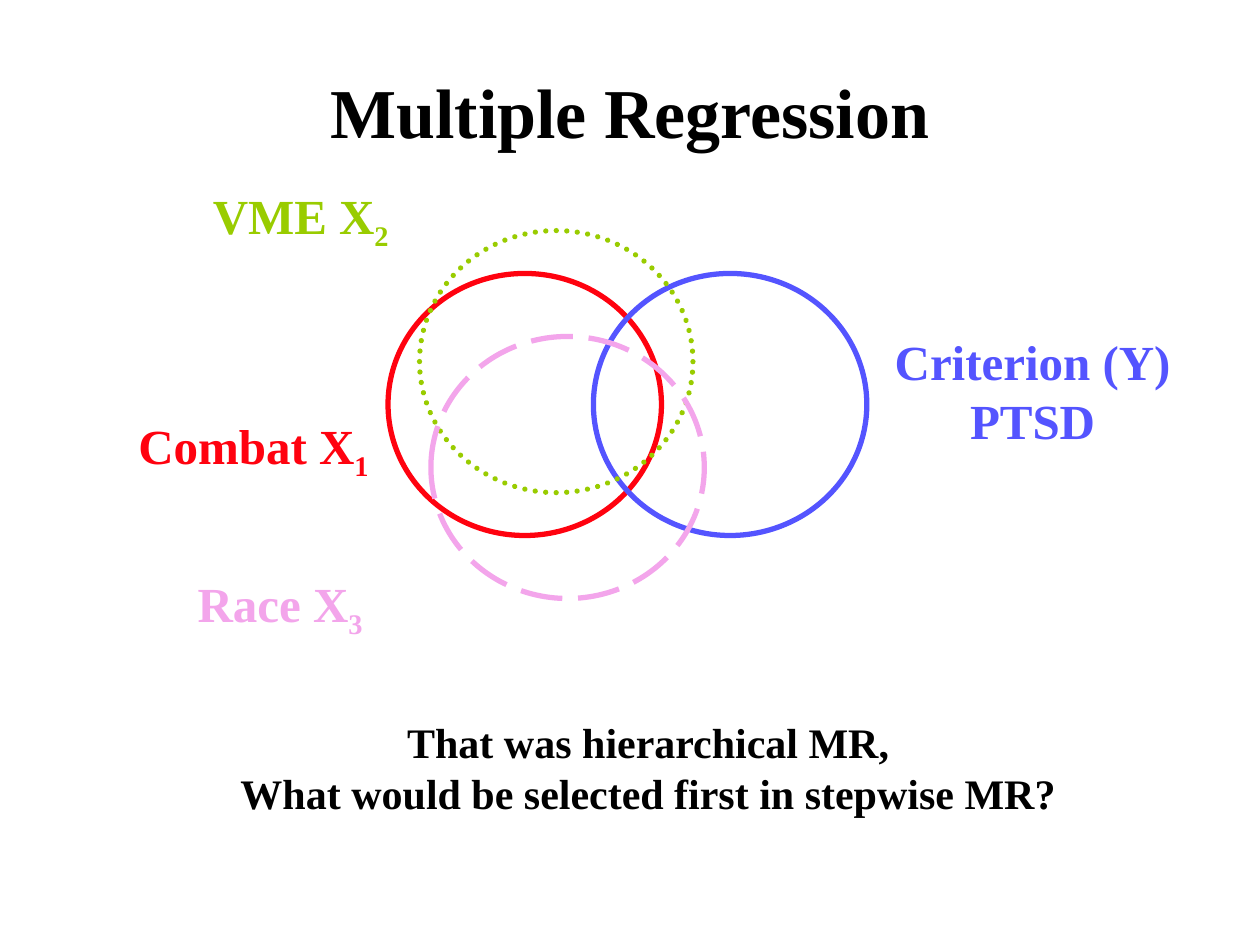
from dataclasses import dataclass

from pptx import Presentation
from pptx.dml.color import RGBColor
from pptx.enum.dml import MSO_LINE
from pptx.enum.shapes import MSO_SHAPE
from pptx.enum.text import MSO_ANCHOR, PP_ALIGN
from pptx.util import Inches, Pt

OVAL = MSO_SHAPE.OVAL
SOLID, DOTTED, DASHED = MSO_LINE.SOLID, MSO_LINE.ROUND_DOT, MSO_LINE.LONG_DASH
LEFT, CENTER = PP_ALIGN.LEFT, PP_ALIGN.CENTER
MIDDLE = MSO_ANCHOR.MIDDLE


@dataclass(frozen=True)
class Theme:
    font: str = "Times New Roman"
    black: str = "000000"
    combat: str = "FF020F"
    criterion: str = "5454FF"
    vme: str = "99CC00"
    race: str = "F3A5EB"
    title_size: int = 40
    label_size: int = 28
    question_size: int = 24
    line_width: int = 3


theme = Theme()


def style(p, size, color, align):
    p.alignment = align
    p.font.name = theme.font
    p.font.size = Pt(size)
    p.font.bold = True
    p.font.color.rgb = RGBColor.from_string(color)


def add_text(s, box, lines, size, color, align, subscript=""):
    tf = s.shapes.add_textbox(*map(Inches, box)).text_frame
    tf.word_wrap = False
    for i, line in enumerate(lines):
        p = tf.paragraphs[0] if i == 0 else tf.add_paragraph()
        style(p, size, color, align)
        p.add_run().text = line
    if subscript:
        r = p.add_run()
        r.text = subscript
        r._r.get_or_add_rPr().set("baseline", "-25000")


prs = Presentation()
prs.slide_width, prs.slide_height = Inches(10), Inches(7.5)
s = prs.slides.add_slide(prs.slide_layouts[5])

# Title
title = s.shapes.title
title.left, title.top = Inches(0.75), Inches(0.25)
title.width, title.height = Inches(8.5), Inches(1.25)
title.text_frame.text = "Multiple Regression"
title.text_frame.vertical_anchor = MIDDLE
style(title.text_frame.paragraphs[0], theme.title_size, theme.black, CENTER)

# Overlapping circles, one per variable
for left, top, color, dash in [
    (3.08, 2.17, theme.combat, SOLID),
    (4.71, 2.17, theme.criterion, SOLID),
    (3.33, 1.83, theme.vme, DOTTED),
    (3.42, 2.67, theme.race, DASHED),
]:
    circle = s.shapes.add_shape(OVAL, Inches(left), Inches(top), Inches(2.17), Inches(2.08))
    circle.shadow.inherit = False
    circle.fill.background()
    circle.line.color.rgb = RGBColor.from_string(color)
    circle.line.width = Pt(theme.line_width)
    circle.line.dash_style = dash
    if dash == DOTTED:
        circle.line._get_or_add_ln().set("cap", "rnd")

# Predictor labels
for left, top, width, name, number, color in [
    (1, 3.25, 2.05, "Combat X", "1", theme.combat),
    (1.59, 1.42, 1.62, "VME X", "2", theme.vme),
    (1.47, 4.5, 1.53, "Race X", "3", theme.race),
]:
    add_text(s, (left, top, width, 0.57), [name], theme.label_size, color, LEFT, number)

# Criterion label
add_text(s, (7, 2.58, 2.39, 1.03), ["Criterion (Y)", "PTSD"],
         theme.label_size, theme.criterion, CENTER)

# Closing question
add_text(s, (1.81, 5.64, 6.67, 0.9),
         ["That was hierarchical MR,", "What would be selected first in stepwise MR?"],
         theme.question_size, theme.black, CENTER)

prs.save("out.pptx")
